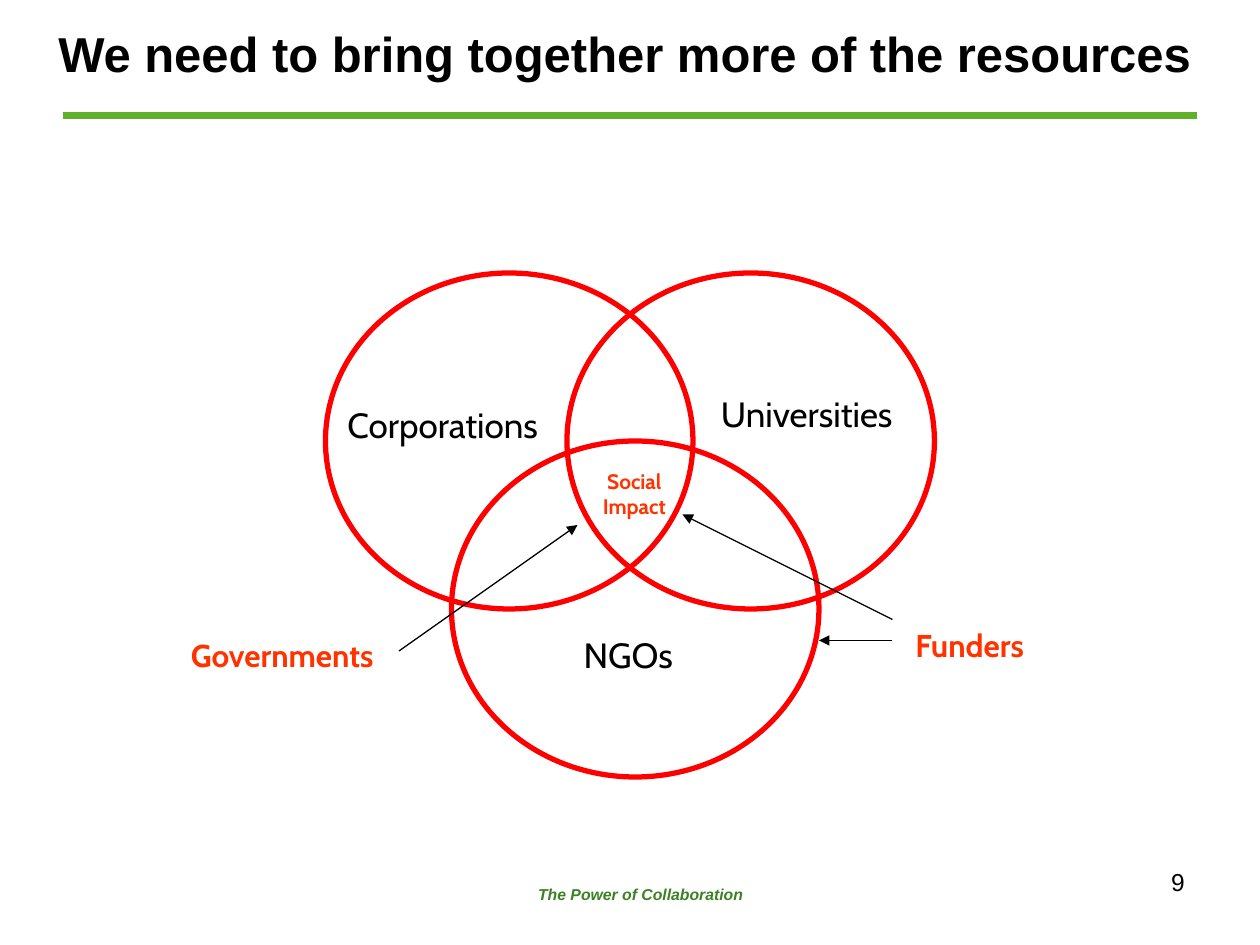
"""Build a Venn diagram slide on combining resources for social impact."""
from dataclasses import dataclass

from lxml import etree
from pptx import Presentation
from pptx import util as u
from pptx.dml.color import RGBColor
from pptx.enum import shapes, text
from pptx.oxml.ns import qn

BLACK, RED, ORANGE = "000000", "FF0000", "FF3300"
GREEN, DARK_GREEN = "5FB12B", "3B8123"
CIRCLE_W, CIRCLE_H = 210, 192
LEFT, CENTER, RIGHT = text.PP_ALIGN.LEFT, text.PP_ALIGN.CENTER, text.PP_ALIGN.RIGHT


@dataclass
class Label:
    words: str
    x: float
    y: float
    w: float
    h: float
    size: float
    color: str = BLACK
    font: str = "Cabin"
    bold: bool = False
    italic: bool = False
    align: text.PP_ALIGN = CENTER
    wrap: bool = False
    anchor: text.MSO_ANCHOR = text.MSO_ANCHOR.TOP


@dataclass
class Line:
    x1: float
    y1: float
    x2: float
    y2: float
    color: str = BLACK
    width: float = 0.75
    arrow: bool = True


LABELS = [
    Label("We need to bring together more of the resources", 12, -6, 690, 72, 28,
          font="Arial", bold=True, wrap=True, anchor=text.MSO_ANCHOR.MIDDLE),
    Label("The Power of Collaboration", 252, 502, 228, 27, 9, DARK_GREEN,
          font="Arial", bold=True, italic=True, wrap=True),
    Label("9", 516, 492, 168, 37, 14, font="Arial", align=RIGHT, wrap=True),
    Label("Corporations", 188.5, 227, 129, 31, 20),
    Label("Universities", 402, 221, 118, 31, 20),
    Label("NGOs", 324, 358.5, 70, 31, 20),
    Label("Social\nImpact", 336, 264, 53, 36, 12, ORANGE, bold=True),
    Label("Governments", 102, 360, 130, 29, 18, ORANGE, bold=True, align=LEFT),
    Label("Funders", 516, 354, 86, 29, 18, ORANGE, bold=True, align=LEFT),
]
CIRCLES = [(324, 156), (258, 252), (186, 156)]
LINES = [
    Line(36, 66, 684, 66, GREEN, 4.5, arrow=False),
    Line(510, 366, 468, 366),
    Line(228, 372, 330, 300),
    Line(510, 354, 390, 294),
]


def rgb(value: str) -> RGBColor:
    """Turn a hex string into a colour."""
    return RGBColor.from_string(value)


def add_label(s, label: Label) -> None:
    """Add a text box with one format throughout."""
    sp = s.shapes.add_textbox(*map(u.Pt, (label.x, label.y, label.w, label.h)))
    tf = sp.text_frame
    tf.text = label.words
    tf.word_wrap = label.wrap
    tf.vertical_anchor = label.anchor
    if not label.wrap:
        tf.auto_size = text.MSO_AUTO_SIZE.SHAPE_TO_FIT_TEXT
    for p in tf.paragraphs:
        p.alignment = label.align
        for r in p.runs:
            r.font.name = label.font
            r.font.size = u.Pt(label.size)
            r.font.bold = label.bold
            r.font.italic = label.italic
            r.font.color.rgb = rgb(label.color)


def add_circle(s, x: float, y: float) -> None:
    """Add one unfilled ring of the diagram."""
    sp = s.shapes.add_shape(shapes.MSO_SHAPE.OVAL, *map(u.Pt, (x, y, CIRCLE_W, CIRCLE_H)))
    sp.shadow.inherit = False
    sp.fill.background()
    sp.line.color.rgb = rgb(RED)
    sp.line.width = u.Pt(3)


def add_line(s, line: Line) -> None:
    """Add a straight line, with an arrowhead at its end if wanted."""
    ends = map(u.Pt, (line.x1, line.y1, line.x2, line.y2))
    sp = s.shapes.add_connector(shapes.MSO_CONNECTOR.STRAIGHT, *ends)
    sp.line.color.rgb = rgb(line.color)
    sp.line.width = u.Pt(line.width)
    if line.arrow:
        etree.SubElement(sp.line._get_or_add_ln(), qn("a:tailEnd"), type="triangle")
    etree.SubElement(sp._element.spPr, qn("a:effectLst"))


def main() -> None:
    """Build and save the slide."""
    prs = Presentation()
    prs.slide_width, prs.slide_height = u.Pt(720), u.Pt(540)
    s = prs.slides.add_slide(prs.slide_layouts[6])
    for label in LABELS:
        add_label(s, label)
    for x, y in CIRCLES:
        add_circle(s, x, y)
    for line in LINES:
        add_line(s, line)
    prs.save("out.pptx")


if __name__ == "__main__":
    main()
